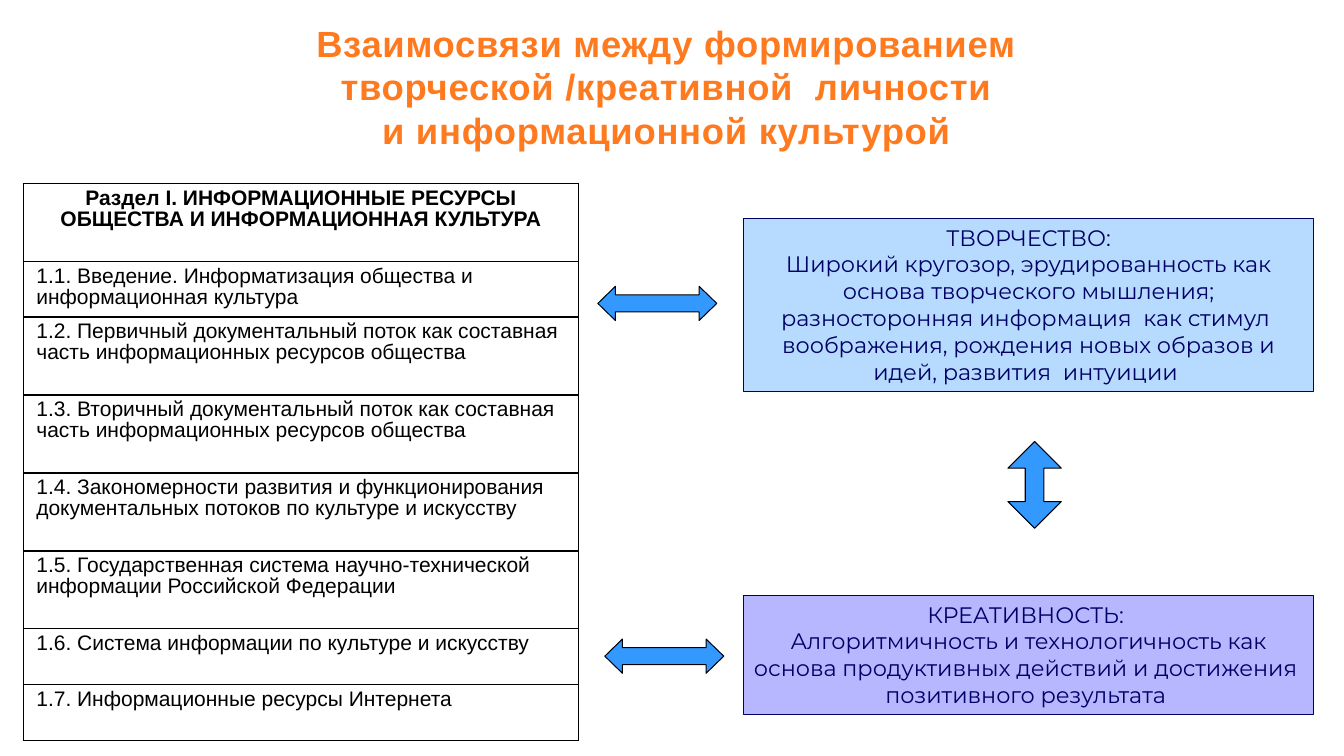
from lxml.etree import SubElement as Sub
from pptx import Presentation
from pptx.dml.color import RGBColor
from pptx.enum.shapes import MSO_SHAPE as Shape
from pptx.enum.text import MSO_ANCHOR as Anchor, MSO_AUTO_SIZE as Fit, PP_ALIGN as Align
from pptx.oxml.ns import qn
from pptx.util import Inches, Pt

WIDE, HIGH = Inches(13.333), Inches(7.5)

TITLE = ("Взаимосвязи между формированием \vтворческой /креативной  личности "
         "\vи информационной культурой ")
TOPICS = [  # text, height in table units
    ("Раздел I. ИНФОРМАЦИОННЫЕ РЕСУРСЫ ОБЩЕСТВА И ИНФОРМАЦИОННАЯ КУЛЬТУРА", 7),
    ("1.1. Введение. Информатизация общества и информационная культура", 5),
    ("1.2. Первичный документальный поток как составная часть "
     "информационных ресурсов общества", 7),
    ("1.3. Вторичный документальный поток как составная часть "
     "информационных ресурсов общества", 7),
    ("1.4. Закономерности развития и функционирования "
     "документальных потоков по культуре и искусству", 7),
    ("1.5. Государственная система научно-технической "
     "информации Российской Федерации", 7),
    ("1.6. Система информации по культуре и искусству", 5),
    ("1.7. Информационные ресурсы Интернета", 5),
]
PANELS = [  # box, fill, head, body
    ((55.35, 28.93, 42.38, 22.93), "99CCFF", "ТВОРЧЕСТВО:",
     "Широкий кругозор, эрудированность как основа творческого мышления; "
     "разносторонняя информация  как стимул  воображения, рождения новых "
     "образов и идей, развития  интуиции "),
    ((55.35, 78.8, 42.38, 15.73), "9999FF", "КРЕАТИВНОСТЬ: ",
     "Алгоритмичность и технологичность как основа продуктивных действий "
     "и достижения  позитивного результата "),
]
ARROWS = [  # box, shape, head length
    ((44.48, 37.87, 8.85, 4.53), Shape.LEFT_RIGHT_ARROW, 0.515),
    ((45, 84.53, 8.85, 4.53), Shape.LEFT_RIGHT_ARROW, 0.515),
    ((75, 58.4, 3.97, 11.47), Shape.UP_DOWN_ARROW, 0.35),
]


def place(box):
    """Turn percent shares of the slide into left, top, width, height."""
    return [int(part * side / 100) for part, side in zip(box, (WIDE, HIGH) * 2)]


def tint(hue):
    return RGBColor.from_string(hue)


def style(par, face, size, hue, bold=False, align=Align.CENTER):
    par.alignment = align
    font = par.font
    font.name, font.size, font.bold = face, Pt(size), bold
    font.color.rgb = tint(hue)
    return font


def paint(shape, fill, line):
    shape.shadow.inherit = False
    shape.fill.solid()
    shape.fill.fore_color.rgb = tint(fill)
    shape.line.color.rgb = tint(line)
    shape.line.width = Pt(0.75)


def add_title(slide, box):
    title = slide.shapes.title
    title.left, title.top, title.width, title.height = place(box)
    frame = title.text_frame
    frame.text = TITLE
    frame.auto_size = Fit.NONE
    frame.vertical_anchor = Anchor.MIDDLE
    font = style(frame.paragraphs[0], "Arial", 26, "FF7A1F", True)
    font._element.set("spc", "50")


def edge(cell):
    """Draw a thin black border, placed ahead of the cell's fill."""
    props = cell._tc.get_or_add_tcPr()
    for side in ("lnL", "lnR", "lnT", "lnB"):
        line = Sub(props, qn(f"a:{side}"), w=str(Pt(1)))
        Sub(Sub(line, qn("a:solidFill")), qn("a:srgbClr"), val="000000")


def add_topics(slide, box):
    left, top, width, height = place(box)
    grid = slide.shapes.add_table(len(TOPICS), 1, left, top, width, height).table
    grid.first_row = grid.horz_banding = False
    unit = height / sum(size for _, size in TOPICS)
    for num, (text, size) in enumerate(TOPICS):
        grid.rows[num].height = int(size * unit)
        cell = grid.cell(num, 0)
        edge(cell)
        cell.fill.solid()
        cell.fill.fore_color.rgb = tint("FFFFFF")
        cell.margin_left = cell.margin_right = Inches(0.13)
        cell.text = text
        par = cell.text_frame.paragraphs[0]
        par.line_spacing = 0.9
        head = num == 0
        style(par, "Arial", 15, "000000", head, Align.CENTER if head else Align.LEFT)


def add_panel(slide, box, fill, head, body):
    panel = slide.shapes.add_shape(Shape.RECTANGLE, *place(box))
    paint(panel, fill, "000066")
    shade = panel.fill._xPr.find(qn("a:solidFill"))[0]
    Sub(shade, qn("a:alpha"), val="70000")
    frame = panel.text_frame
    frame.word_wrap = True
    frame.vertical_anchor = Anchor.TOP
    frame.text = f"{head}\n{body}"
    for par in frame.paragraphs:
        style(par, "Montserrat", 16, "000066")


def add_arrow(slide, box, kind, tip):
    arrow = slide.shapes.add_shape(kind, *place(box))
    arrow.adjustments[0], arrow.adjustments[1] = 0.5, tip
    paint(arrow, "3399FF", "000000")


def main():
    deck = Presentation()
    deck.slide_width, deck.slide_height = WIDE, HIGH
    slide = deck.slides.add_slide(deck.slide_layouts[5])
    add_title(slide, (0, 2, 100, 18.8))
    add_topics(slide, (1.73, 24.27, 41.33, 73.67))
    for panel in PANELS:
        add_panel(slide, *panel)
    for arrow in ARROWS:
        add_arrow(slide, *arrow)
    deck.save("out.pptx")


if __name__ == "__main__":
    main()
